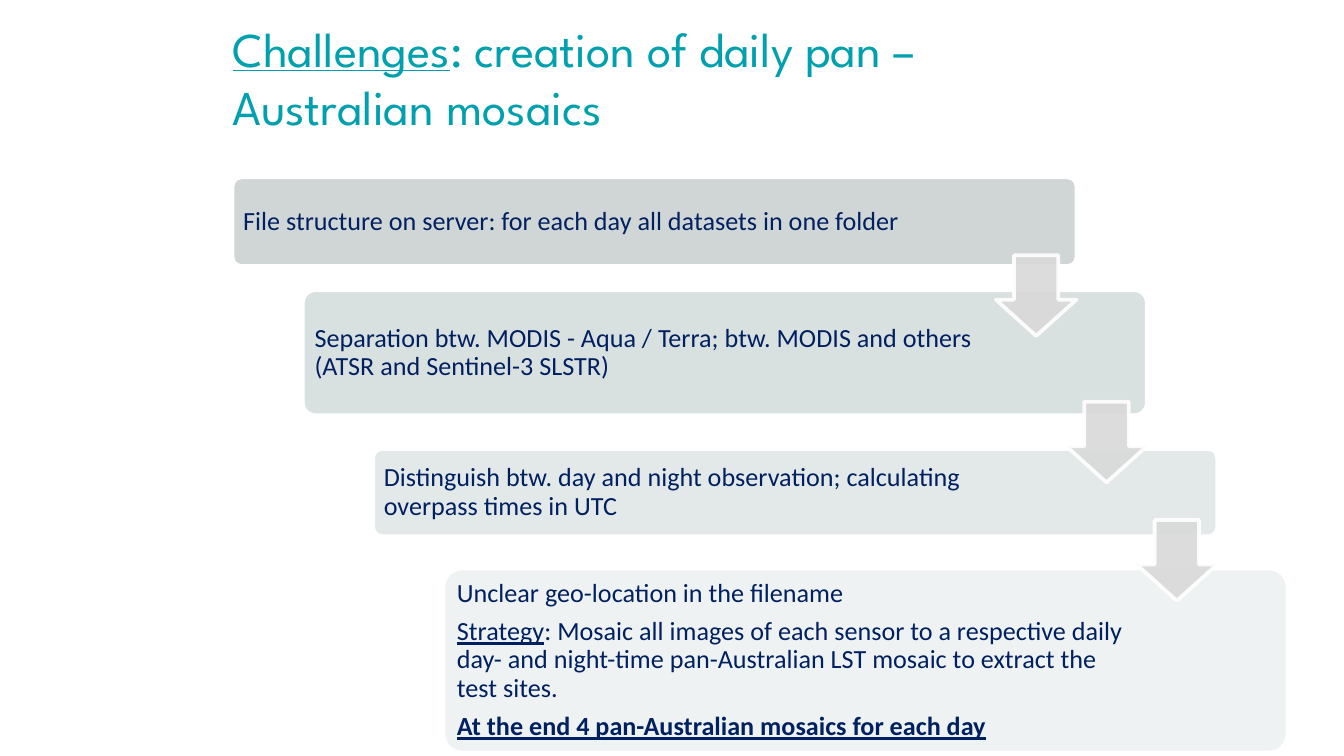
import pptx
import pptx.util
import pptx.dml.color
import pptx.enum.shapes
import pptx.enum.text
import pptx.oxml.ns
import lxml.etree

Inches = pptx.util.Inches
Pt = pptx.util.Pt
RGBColor = pptx.dml.color.RGBColor
Shapes = pptx.enum.shapes.MSO_SHAPE
Anchor = pptx.enum.text.MSO_ANCHOR
Align = pptx.enum.text.PP_ALIGN

TEAL = RGBColor(0x00, 0xA0, 0xAF)
NAVY = RGBColor(0x00, 0x20, 0x60)
WHITE = RGBColor(0xFF, 0xFF, 0xFF)
ARROW_GREY = RGBColor(0xD9, 0xD9, 0xD9)
STEP_GREYS = [
    RGBColor(0xD0, 0xD6, 0xD6),
    RGBColor(0xD9, 0xE0, 0xE0),
    RGBColor(0xE3, 0xE9, 0xE9),
    RGBColor(0xEE, 0xF2, 0xF2),
]

# Staircase grid, in inches: three equal columns from first to last step
LEFT = 1.73
LAST_LEFT = 3.3
COLUMN = (LAST_LEFT - LEFT) / 3
STEP_WIDTH = 6.28
ARROW = 0.6
INSET = 0.06


def add_span(para, text, font, size, color, underline=False, bold=False):
    span = para.add_run()
    span.text = text
    span.font.name = font
    span.font.size = Pt(size)
    span.font.color.rgb = color
    span.font.underline = underline
    span.font.bold = bold


def add_block(slide, kind, left, top, width, height, color):
    block = slide.shapes.add_shape(
        kind, Inches(left), Inches(top), Inches(width), Inches(height))
    block.shadow.inherit = False
    block.fill.solid()
    block.fill.fore_color.rgb = color
    block.line.color.rgb = WHITE
    block.line.width = Pt(2)
    return block


# Widescreen 16:9 slide
deck = pptx.Presentation()
deck.slide_width = Inches(10)
deck.slide_height = deck.slide_width * 9 // 16
slide = deck.slides.add_slide(deck.slide_layouts[5])

# Title
title = slide.shapes.title
title.left, title.top = Inches(LEFT), Inches(0.14)
title.width, title.height = Inches(5.8), Inches(0.96)
frame = title.text_frame
frame.margin_left = frame.margin_right = frame.margin_top = frame.margin_bottom = 0
frame.vertical_anchor = Anchor.TOP
frame.auto_size = pptx.enum.text.MSO_AUTO_SIZE.NONE
frame.word_wrap = True
para = frame.paragraphs[0]
para.alignment = Align.LEFT
add_span(para, "Challenges", "League Spartan", 26, TEAL, underline=True)
add_span(para, ": creation of daily pan – Australian mosaics", "League Spartan", 26, TEAL)

# Steps: top, height, right inset, paragraphs of (text, underline, bold) spans
steps = [
    (1.32, 0.66, 1.08, [
        [("File structure on server: for each day all datasets in one folder", False, False)],
    ]),
    (2.16, 0.93, 1.18, [
        [("Separation btw. MODIS - Aqua / Terra; btw. MODIS and others "
          "(ATSR and Sentinel-3 SLSTR)", False, False)],
    ]),
    (3.34, 0.65, 1.18, [
        [("Distinguish btw. day and night observation; calculating "
          "overpass times in UTC", False, False)],
    ]),
    (4.23, 1.37, 1.18, [
        [("Unclear geo-location in the filename", False, False)],
        [("Strategy", True, False),
         (": Mosaic all images of each sensor to a respective daily day- and "
          "night-time pan-Australian LST mosaic to extract the test sites.", False, False)],
        [("At the end 4 pan-Australian mosaics for each day", True, True)],
    ]),
]
for index, (top, height, right_inset, paragraphs) in enumerate(steps):
    box = add_block(slide, Shapes.ROUNDED_RECTANGLE, LEFT + index * COLUMN, top,
                    STEP_WIDTH, height, STEP_GREYS[index])
    box.adjustments[0] = 0.1
    frame = box.text_frame
    frame.word_wrap = True
    frame.vertical_anchor = Anchor.MIDDLE
    frame.margin_left = frame.margin_top = frame.margin_bottom = Inches(INSET)
    frame.margin_right = Inches(right_inset)
    for number, spans in enumerate(paragraphs):
        para = frame.add_paragraph() if number else frame.paragraphs[0]
        para.alignment = Align.LEFT
        para.line_spacing = 0.9
        para.space_before = Pt(5.4 if number else 0)
        for text, underline, bold in spans:
            add_span(para, text, "Calibri", 14, NAVY, underline, bold)

# Arrows, flush with the right edge of the step they leave
for index, top in enumerate([1.9, 2.99, 3.87]):
    left = LEFT + index * COLUMN + STEP_WIDTH - ARROW
    arrow = add_block(slide, Shapes.DOWN_ARROW, left, top, ARROW, ARROW, ARROW_GREY)
    arrow.adjustments[0] = 0.55
    arrow.adjustments[1] = 0.45
    # Fill and outline are 90 % opaque
    for color in arrow.element.spPr.iter(pptx.oxml.ns.qn("a:srgbClr")):
        lxml.etree.SubElement(color, pptx.oxml.ns.qn("a:alpha"), val="90000")

deck.save("out.pptx")
